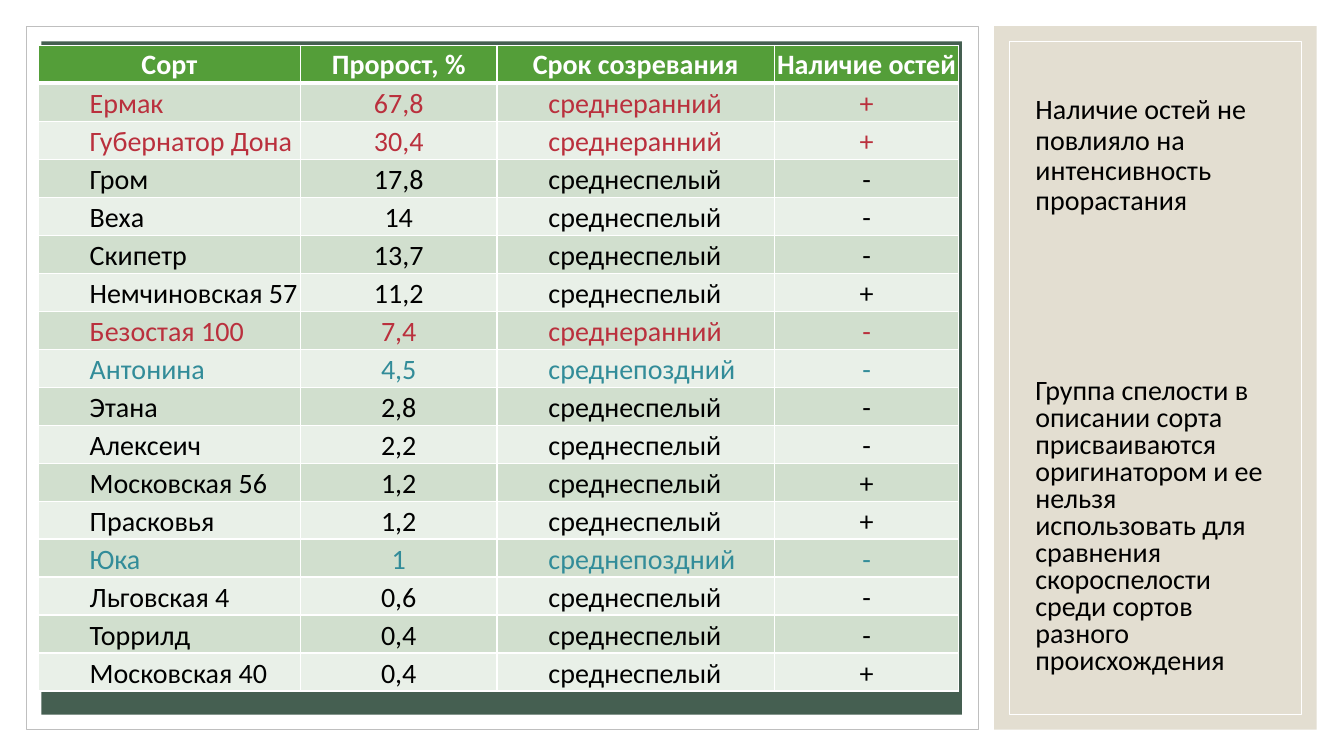
from lxml.etree import SubElement
from pptx import Presentation
from pptx.dml.color import RGBColor
from pptx.enum.shapes import MSO_SHAPE
from pptx.enum.text import MSO_ANCHOR, MSO_AUTO_SIZE, PP_ALIGN
from pptx.oxml.ns import qn
from pptx.util import Emu, Pt

EMU_PER_PX = 9144
FONT = "Calibri"
TEXT_SIZE = 20

WHITE = RGBColor(0xFF, 0xFF, 0xFF)
BLACK = RGBColor(0x00, 0x00, 0x00)
GREY = RGBColor(0xBF, 0xBF, 0xBF)
DARK_GREEN = RGBColor(0x45, 0x5F, 0x51)
BEIGE = RGBColor(0xE3, 0xDE, 0xD1)
HEADER_GREEN = RGBColor(0x54, 0x9E, 0x39)
BAND_DARK = RGBColor(0xD1, 0xDF, 0xCE)
BAND_LIGHT = RGBColor(0xE9, 0xF0, 0xE8)
RED = RGBColor(0xBA, 0x30, 0x3D)
TEAL = RGBColor(0x32, 0x8C, 0x99)

RIPENING_COLORS = {
    "среднеранний": RED,
    "среднеспелый": BLACK,
    "среднепоздний": TEAL,
}
COLUMN_WIDTHS = [260, 195, 275, 183]
TABLE_HEIGHT = 641
HEADINGS = ["Сорт", "Пророст, %", "Срок созревания", "Наличие остей"]
VARIETIES = [
    ("Ермак", "67,8", "среднеранний", "+"),
    ("Губернатор Дона", "30,4", "среднеранний", "+"),
    ("Гром", "17,8", "среднеспелый", "-"),
    ("Веха", "14", "среднеспелый", "-"),
    ("Скипетр", "13,7", "среднеспелый", "-"),
    ("Немчиновская 57", "11,2", "среднеспелый", "+"),
    ("Безостая 100", "7,4", "среднеранний", "-"),
    ("Антонина", "4,5", "среднепоздний", "-"),
    ("Этана", "2,8", "среднеспелый", "-"),
    ("Алексеич", "2,2", "среднеспелый", "-"),
    ("Московская 56", "1,2", "среднеспелый", "+"),
    ("Прасковья", "1,2", "среднеспелый", "+"),
    ("Юка", "1", "среднепоздний", "-"),
    ("Льговская 4", "0,6", "среднеспелый", "-"),
    ("Торрилд", "0,4", "среднеспелый", "-"),
    ("Московская 40", "0,4", "среднеспелый", "+"),
]
AWNS_NOTE = "Наличие остей не повлияло на интенсивность прорастания"
RIPENESS_NOTE = (
    "Группа спелости в описании сорта присваиваются оригинатором и ее нельзя "
    "использовать для сравнения скороспелости среди сортов разного происхождения"
)


def px(length):
    return Emu(length * EMU_PER_PX)


def write_text(frame, text, color=BLACK, bold=False, align=PP_ALIGN.LEFT,
               spacing=None, indent=0):
    para = frame.paragraphs[0]
    para.alignment = align
    para.line_spacing = spacing
    if indent:
        para.level = 1
        properties = para._p.get_or_add_pPr()
        properties.set("marL", str(px(indent)))
        properties.set("indent", "0")
    span = para.add_run()
    span.text = text
    span.font.name = FONT
    span.font.size = Pt(TEXT_SIZE)
    span.font.bold = bold
    span.font.color.rgb = color


def add_panel(page, left, top, width, height, fill=None, line=None):
    panel = page.shapes.add_shape(
        MSO_SHAPE.RECTANGLE, px(left), px(top), px(width), px(height))
    panel.shadow.inherit = False
    if fill is None:
        panel.fill.background()
    else:
        panel.fill.solid()
        panel.fill.fore_color.rgb = fill
    if line is None:
        panel.line.fill.background()
    else:
        panel.line.color.rgb = line
        panel.line.width = Pt(0.5)


def format_note(box, left, top, width, height, text, spacing):
    box.left, box.top = px(left), px(top)
    box.width, box.height = px(width), px(height)
    frame = box.text_frame
    frame.word_wrap = True
    frame.auto_size = MSO_AUTO_SIZE.NONE
    frame.vertical_anchor = MSO_ANCHOR.BOTTOM
    write_text(frame, text, spacing=spacing)


def add_borders(cell, top, bottom):
    properties = cell._tc.get_or_add_tcPr()
    for side, width in (("L", 1), ("R", 1), ("T", top), ("B", bottom)):
        border = SubElement(properties, qn(f"a:ln{side}"), w=str(Pt(width)))
        fill = SubElement(border, qn("a:solidFill"))
        SubElement(fill, qn("a:srgbClr"), val=str(WHITE))


def format_cell(cell, text, fill, top=1, bottom=1, anchor=MSO_ANCHOR.BOTTOM,
                **text_format):
    add_borders(cell, top, bottom)
    cell.fill.solid()
    cell.fill.fore_color.rgb = fill
    cell.margin_left = cell.margin_right = cell.margin_top = px(1)
    cell.margin_bottom = 0
    cell.vertical_anchor = anchor
    write_text(cell.text_frame, text, **text_format)


def add_variety_table(page, left, top):
    row_count = len(VARIETIES) + 1
    table = page.shapes.add_table(
        row_count, len(HEADINGS), px(left), px(top),
        px(sum(COLUMN_WIDTHS)), px(TABLE_HEIGHT)).table
    for column, width in zip(table.columns, COLUMN_WIDTHS):
        column.width = px(width)
    for row in table.rows:
        row.height = Emu(px(TABLE_HEIGHT) // row_count)
    for column, heading in enumerate(HEADINGS):
        format_cell(table.cell(0, column), heading, HEADER_GREEN, bottom=3,
                    anchor=MSO_ANCHOR.MIDDLE, color=WHITE, bold=True,
                    align=PP_ALIGN.CENTER)
    for row, variety in enumerate(VARIETIES, start=1):
        band = BAND_DARK if row % 2 else BAND_LIGHT
        color = RIPENING_COLORS[variety[2]]
        for column, text in enumerate(variety):
            indented = column % 2 == 0
            format_cell(table.cell(row, column), text, band,
                        top=3 if row == 1 else 1, color=color,
                        align=PP_ALIGN.LEFT if indented else PP_ALIGN.CENTER,
                        indent=50 if indented else 0)


def main():
    deck = Presentation()
    deck.slide_width, deck.slide_height = px(1333), px(750)
    page = deck.slides.add_slide(deck.slide_layouts[5])
    title = page.shapes.title

    add_panel(page, 26, 26, 944, 698, fill=WHITE, line=GREY)
    add_panel(page, 41, 41, 913, 668, fill=DARK_GREEN)
    add_panel(page, 986, 26, 320, 698, fill=BEIGE)
    add_panel(page, 1001, 41, 290, 668, line=WHITE)

    page.shapes._spTree.append(title._element)
    format_note(title, 1017, 66, 266, 154, AWNS_NOTE, spacing=0.9)
    add_variety_table(page, 38, 45)
    ripeness_box = page.shapes.add_textbox(0, 0, 0, 0)
    format_note(ripeness_box, 1017, 365, 266, 310, RIPENESS_NOTE, spacing=0.8)

    deck.save("out.pptx")


if __name__ == "__main__":
    main()
